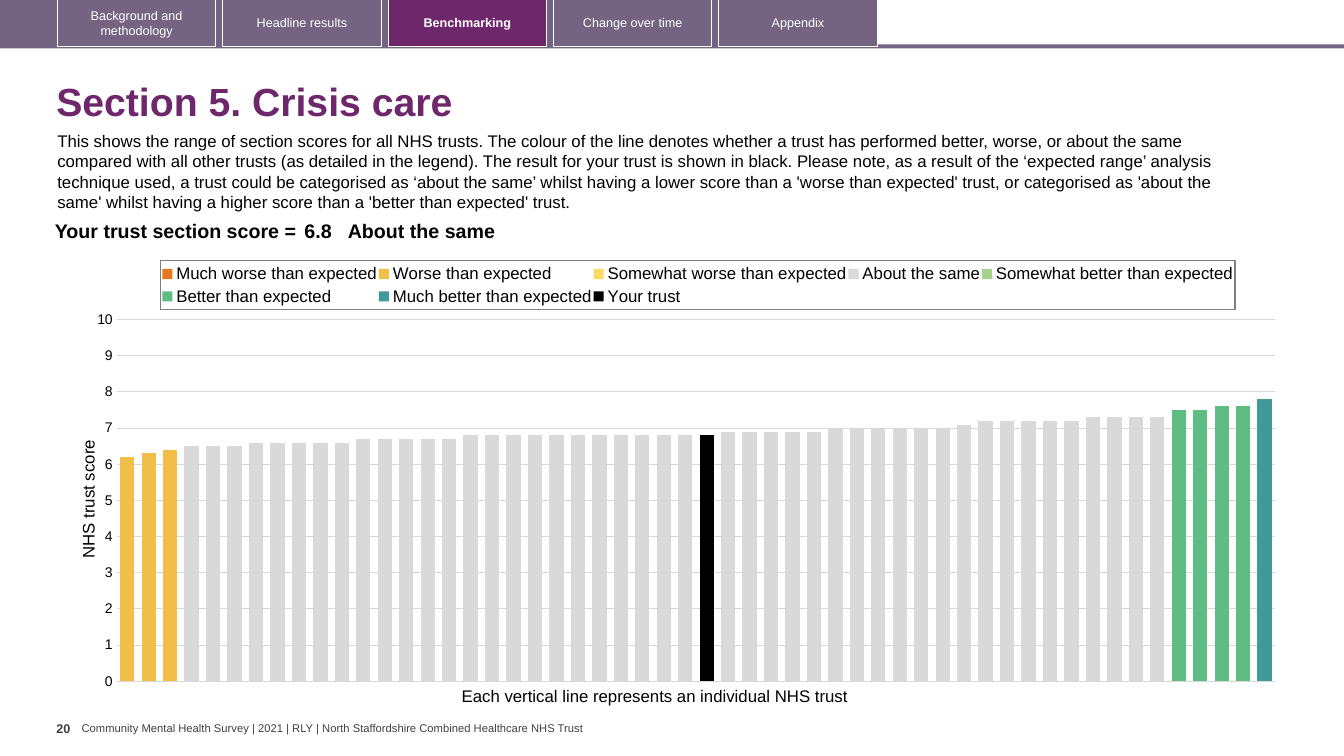
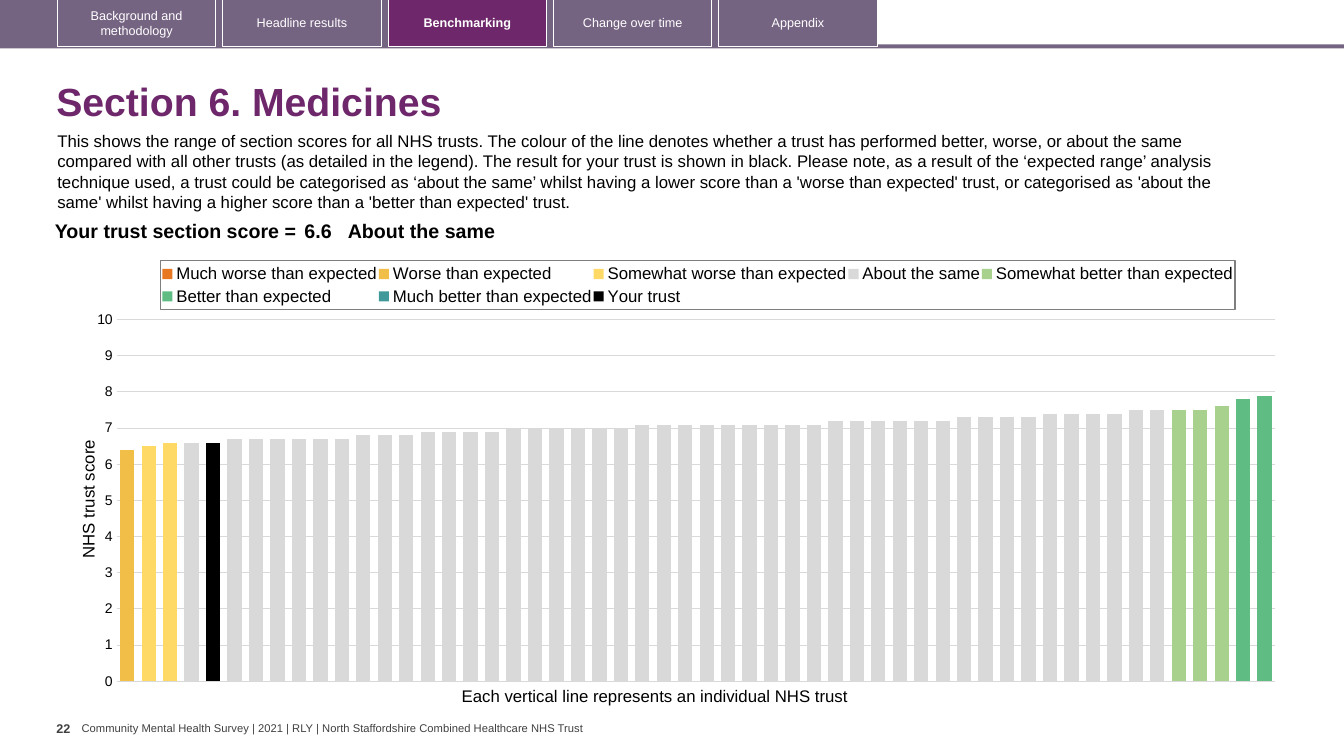
from copy import deepcopy
from dataclasses import dataclass

from lxml import etree
from pptx import Presentation
from pptx.chart.data import CategoryChartData
from pptx.dml.color import RGBColor
from pptx.enum.chart import XL_CHART_TYPE as ChartType
from pptx.enum.chart import XL_LEGEND_POSITION as LegendPosition
from pptx.enum.chart import XL_TICK_MARK as TickMark
from pptx.enum.shapes import MSO_SHAPE as Preset
from pptx.enum.text import MSO_ANCHOR as Anchor
from pptx.enum.text import PP_ALIGN as Align
from pptx.oxml import parse_xml
from pptx.oxml.ns import nsdecls, qn
from pptx.util import Inches, Pt


@dataclass(frozen=True)
class Theme:
    """Colours, fonts and type sizes shared by the slides."""
    font: str = "Arial"
    chart_font: str = "Calibri"
    brand: str = "6D276A"
    band: str = "756382"
    ink: str = "000000"
    white: str = "FFFFFF"
    footer: str = "404040"
    grid: str = "D9D9D9"
    frame: str = "7F7F7F"
    title_size: int = 28
    score_size: int = 14
    body_size: int = 12
    axis_size: int = 10
    tab_size: int = 9
    footer_size: int = 8


THEME = Theme()
TABS = ["Background and methodology", "Headline results", "Benchmarking",
        "Change over time", "Appendix"]
ACTIVE_TAB = "Benchmarking"
FOOTER = ("Community Mental Health Survey | 2021 | RLY | "
          "North Staffordshire Combined Healthcare NHS Trust")
INTRO = (
    "This shows the range of section scores for all NHS trusts. The colour of the line denotes "
    "whether a trust has performed better, worse, or about the same compared with all other "
    "trusts (as detailed in the legend). The result for your trust is shown in black. Please "
    "note, as a result of the ‘expected range’ analysis technique used, a trust could be "
    "categorised as ‘about the same’ whilst having a lower score than a 'worse than expected' "
    "trust, or categorised as 'about the same' whilst having a higher score than a 'better than "
    "expected' trust.")
RATING_COLOURS = {
    "Much worse than expected": "E87722",
    "Worse than expected": "F1BE48",
    "Somewhat worse than expected": "FFD966",
    "About the same": "D9D9D9",
    "Somewhat better than expected": "A9D18E",
    "Better than expected": "5FBD83",
    "Much better than expected": "419999",
    "Your trust": "000000",
}
SECTIONS = [
    dict(title="Section 5. Crisis care", page=20, score=6.8, rank=28, rating="About the same",
         bands=[
             ("Worse than expected", [(6.2, 1), (6.3, 1), (6.4, 1)]),
             ("About the same", [(6.5, 3), (6.6, 5), (6.7, 5), (6.8, 12), (6.9, 5),
                                 (7, 6), (7.1, 1), (7.2, 5), (7.3, 4)]),
             ("Better than expected", [(7.5, 2), (7.6, 2)]),
             ("Much better than expected", [(7.8, 1)]),
         ]),
    dict(title="Section 6. Medicines", page=22, score=6.6, rank=5, rating="About the same",
         bands=[
             ("Worse than expected", [(6.4, 1)]),
             ("Somewhat worse than expected", [(6.5, 1), (6.6, 1)]),
             ("About the same", [(6.6, 2), (6.7, 6), (6.8, 3), (6.9, 4), (7, 6),
                                 (7.1, 9), (7.2, 6), (7.3, 4), (7.4, 4), (7.5, 2)]),
             ("Somewhat better than expected", [(7.5, 2), (7.6, 1)]),
             ("Better than expected", [(7.8, 1), (7.9, 1)]),
         ]),
]


def set_font(font, size, colour=THEME.ink, bold=False, face=THEME.font):
    """Apply face, size, colour and weight to a font."""
    font.name, font.size, font.bold = face, Pt(size), bold
    font.color.rgb = RGBColor.from_string(colour)


def write(frame, text, size=THEME.body_size, colour=THEME.ink, bold=False,
          align=Align.LEFT, spacing=None):
    """Write one formatted paragraph into a text frame."""
    frame.word_wrap = True
    paragraph = frame.paragraphs[0]
    paragraph.alignment = align
    if spacing:
        paragraph.line_spacing = spacing
    run = paragraph.add_run()
    run.text = text
    set_font(run.font, size, colour, bold)


def set_margins(holder, sides, ends):
    """Set the side and end margins of a text frame or cell."""
    holder.margin_left = holder.margin_right = Inches(sides)
    holder.margin_top = holder.margin_bottom = Inches(ends)


def add_text(slide, box, text, anchor=Anchor.TOP, margins=(0.1, 0.05), **style):
    """Place a text box."""
    frame = slide.shapes.add_textbox(*map(Inches, box)).text_frame
    frame.vertical_anchor = anchor
    set_margins(frame, *margins)
    write(frame, text, **style)


def add_block(slide, box, fill=None, line=None):
    """Place a flat rectangle."""
    block = slide.shapes.add_shape(Preset.RECTANGLE, *map(Inches, box))
    block.shadow.inherit = False
    if fill:
        block.fill.solid()
        block.fill.fore_color.rgb = RGBColor.from_string(fill)
    else:
        block.fill.background()
    if line:
        block.line.color.rgb = RGBColor.from_string(line)
        block.line.width = Pt(0.75)
    else:
        block.line.fill.background()
    return block


def add_navigation(slide, box):
    """Draw the tab band across the top of a slide."""
    left, top, width, height = box
    add_block(slide, (left, top + 0.44, width, 0.04), THEME.band)
    add_block(slide, (left, top, 8.73, height), THEME.band)
    for index, label in enumerate(TABS):
        active = label == ACTIVE_TAB
        tab = add_block(slide, (left + 0.6 + 1.64 * index, top - 0.01, 1.57, height),
                        THEME.brand if active else None, THEME.white)
        tab.text_frame.vertical_anchor = Anchor.MIDDLE
        write(tab.text_frame, label, size=THEME.tab_size, colour=THEME.white,
              bold=active, align=Align.CENTER)


def add_footer(slide, box, page):
    """Write the page number and the survey line."""
    left, top, width, height = box
    add_text(slide, (left, top, 0.25, height), str(page), margins=(0, 0.05),
             size=THEME.tab_size, colour=THEME.footer, bold=True)
    add_text(slide, (left + 0.25, top + 0.06, width - 0.25, 0.13), FOOTER, Anchor.MIDDLE,
             (0, 0), size=THEME.footer_size, colour=THEME.footer)


def add_score(slide, box, score, rating):
    """Place the one-row table with the trust's score."""
    table = slide.shapes.add_table(1, 3, *map(Inches, box)).table
    table.first_row = table.horz_banding = False
    columns = [("Your trust section score =", 2.63, 0.04, Align.RIGHT),
               (str(score), 0.47, 0.04, Align.LEFT),
               (rating, box[2] - 3.1, 0, Align.LEFT)]
    for index, (text, width, side, align) in enumerate(columns):
        table.columns[index].width = Inches(width)
        cell = table.cell(0, index)
        cell.fill.background()
        set_margins(cell, side, 0.04)
        write(cell.text_frame, text, size=THEME.score_size, bold=True, align=align)


def series_values(bands, score, rank):
    """Spread the score bands over one list of values per rating."""
    ranked = [(rating, value) for rating, runs in bands
              for value, count in runs for _ in range(count)]
    values = {name: [value if rating == name else None for rating, value in ranked]
              for name in RATING_COLOURS}
    values["Your trust"][rank - 1] = score
    return values


def set_layout(parent, index, inner=False, **shares):
    """Give a chart part a manual layout in shares of the chart."""
    for old in parent.findall(qn("c:layout")):
        parent.remove(old)
    layout = parse_xml(f"<c:layout {nsdecls('c')}><c:manualLayout/></c:layout>")
    settings = [("layoutTarget", "inner")] if inner else []
    settings += [("xMode", "edge"), ("yMode", "edge"), *shares.items()]
    for tag, value in settings:
        etree.SubElement(layout[0], qn(f"c:{tag}")).set("val", str(value))
    parent.insert(index, layout)


def move_to_second_axis(plot_area):
    """Move the last series to a second pair of axes."""
    first = plot_area.find(qn("c:barChart"))
    second = deepcopy(first)
    first.remove(first.findall(qn("c:ser"))[-1])
    for series in second.findall(qn("c:ser"))[:-1]:
        second.remove(series)
    first.addnext(second)
    new_ids = {}
    for number, reference in enumerate(second.findall(qn("c:axId")), 1):
        new_ids[reference.get("val")] = str(5000 + number)
        reference.set("val", str(5000 + number))
    value_axis = plot_area.find(qn("c:valAx"))
    twins = [deepcopy(value_axis), deepcopy(plot_area.find(qn("c:catAx")))]
    for twin in twins:
        for tag in ("c:axId", "c:crossAx"):
            reference = twin.find(qn(tag))
            reference.set("val", new_ids[reference.get("val")])
    right = twins[0]
    for tag in ("c:majorGridlines", "c:title"):
        right.remove(right.find(qn(tag)))
    right.find(qn("c:axPos")).set("val", "r")
    right.find(qn("c:tickLblPos")).set("val", "none")
    right.find(qn("c:crosses")).set("val", "max")
    for twin in reversed(twins):
        value_axis.addnext(twin)


def style_value_axis(axis):
    """Format the score axis, its grid and its title."""
    axis.minimum_scale, axis.maximum_scale, axis.major_unit = 0, 10, 1
    axis.major_tick_mark = axis.minor_tick_mark = TickMark.NONE
    axis.format.line.fill.background()
    grid = axis.major_gridlines.format.line
    grid.color.rgb, grid.width = RGBColor.from_string(THEME.grid), Pt(0.75)
    set_font(axis.tick_labels.font, THEME.axis_size)
    write(axis.axis_title.text_frame, "NHS trust score")


def add_score_chart(slide, box, bands, score, rank):
    """Draw the ranked trust scores as columns coloured by rating."""
    values = series_values(bands, score, rank)
    data = CategoryChartData(number_format="General")
    data.categories = [str(n + 1) for n in range(len(values["Your trust"]))]
    for name, scores in values.items():
        data.add_series(name, scores)
    chart = slide.shapes.add_chart(ChartType.COLUMN_CLUSTERED, *map(Inches, box), data).chart
    set_font(chart.font, THEME.axis_size, face=THEME.chart_font)
    chart.has_title = False
    plot = chart.plots[0]
    plot.gap_width, plot.overlap, plot.vary_by_categories = 50, 100, False
    for series in plot.series:
        series.format.fill.solid()
        series.format.fill.fore_color.rgb = RGBColor.from_string(RATING_COLOURS[series.name])
    chart.category_axis.visible = False
    style_value_axis(chart.value_axis)
    chart.has_legend = True
    chart.legend.position = LegendPosition.TOP
    chart.legend.include_in_layout = False
    set_font(chart.legend.font, THEME.body_size)

    plot_area = chart.element.find(f".//{qn('c:plotArea')}")
    legend = chart.element.find(f".//{qn('c:legend')}")
    title = plot_area.find(f".//{qn('c:title')}")
    set_layout(plot_area, 0, inner=True, x=0.04, y=0.158, w=0.946, h=0.808)
    set_layout(legend, 1, x=0.076, y=0.026, w=0.877, h=0.11)
    set_layout(title, 1, x=0.006, y=0.42)
    title.find(f".//{qn('a:bodyPr')}").set("rot", "-5400000")
    legend.find(qn("c:overlay")).addnext(parse_xml(
        f'<c:spPr {nsdecls("c", "a")}><a:ln w="9525"><a:solidFill>'
        f'<a:srgbClr val="{THEME.frame}"/></a:solidFill></a:ln></c:spPr>'))
    move_to_second_axis(plot_area)


def add_section(deck, title, page, score, rank, rating, bands):
    """Build one benchmarking slide."""
    slide = deck.slides.add_slide(deck.slide_layouts[6])
    add_navigation(slide, (-0.03, 0, 13.36, 0.47))
    add_text(slide, (0.46, 0.67, 12.49, 0.72), title, Anchor.MIDDLE,
             size=THEME.title_size, colour=THEME.brand, bold=True, spacing=0.9)
    add_text(slide, (0.47, 1.25, 12.13, 0.91), INTRO)
    add_score(slide, (0.35, 2.15, 11.7, 0.31), score, rating)
    add_score_chart(slide, (0.67, 2.47, 12.15, 4.44), bands, score, rank)
    add_text(slide, (4.48, 6.75, 4.11, 0.3),
             "Each vertical line represents an individual NHS trust")
    add_footer(slide, (0.56, 7.1, 5.3, 0.4), page)


def main():
    """Build and save the deck."""
    deck = Presentation()
    deck.slide_width, deck.slide_height = Inches(13.33), Inches(7.5)
    for section in SECTIONS:
        add_section(deck, **section)
    deck.save("out.pptx")


if __name__ == "__main__":
    main()
